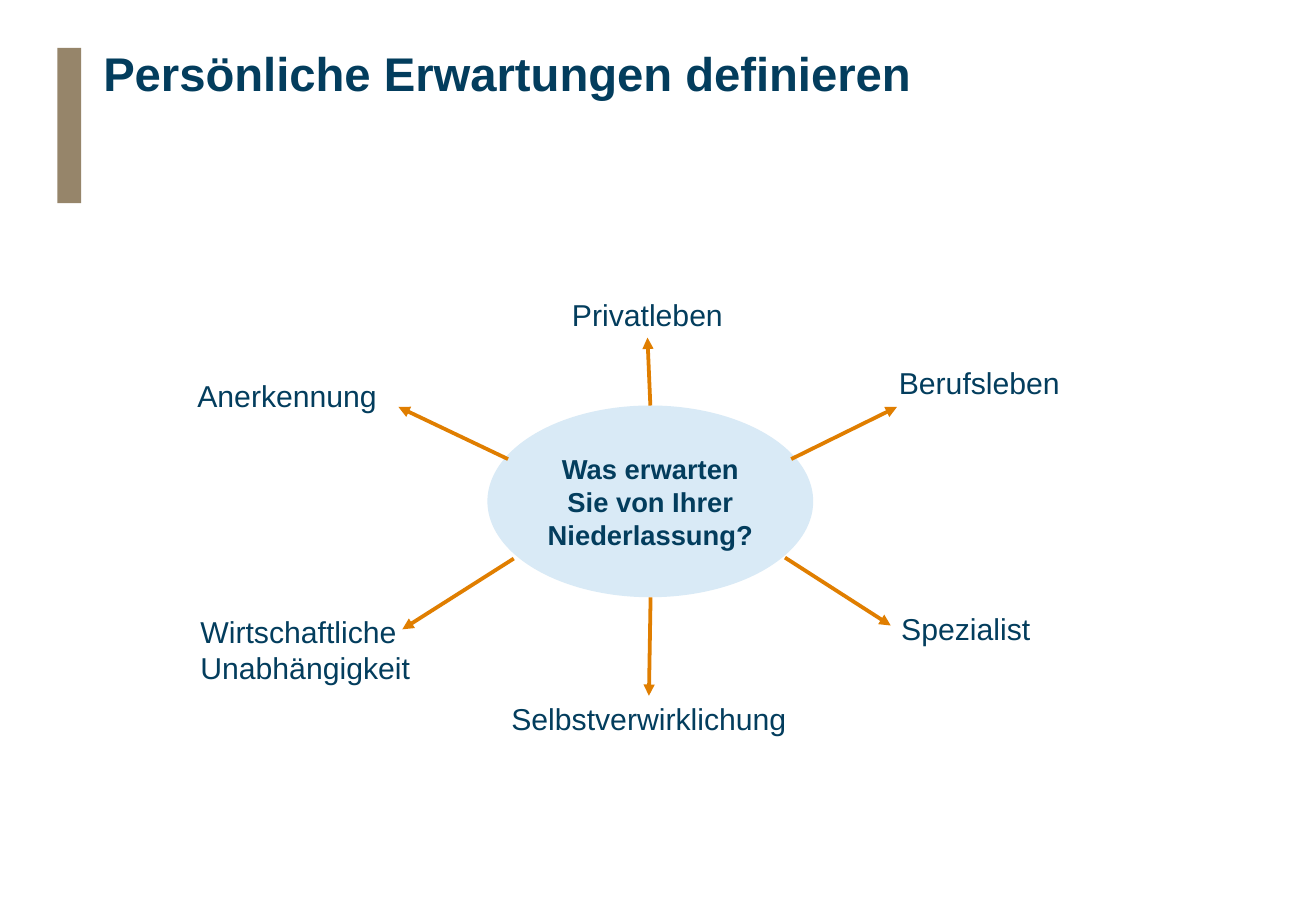
from lxml import etree
from pptx import Presentation
from pptx.dml.color import RGBColor
from pptx.enum.shapes import MSO_CONNECTOR, MSO_SHAPE
from pptx.enum.text import MSO_ANCHOR, MSO_AUTO_SIZE, PP_ALIGN
from pptx.oxml.ns import qn
from pptx.util import Cm, Pt

NAVY = RGBColor(0x03, 0x3D, 0x5D)
TAUPE = RGBColor(0x96, 0x85, 0x6A)
PALE_BLUE = RGBColor(0xD9, 0xEA, 0xF6)
ORANGE = RGBColor(0xE0, 0x7E, 0x00)
LEFT, CENTER, RIGHT = PP_ALIGN.LEFT, PP_ALIGN.CENTER, PP_ALIGN.RIGHT
MIDDLE = MSO_ANCHOR.MIDDLE
GROW = MSO_AUTO_SIZE.SHAPE_TO_FIT_TEXT
RECTANGLE, OVAL = MSO_SHAPE.RECTANGLE, MSO_SHAPE.OVAL
STRAIGHT = MSO_CONNECTOR.STRAIGHT
TOP_SIDE, BOTTOM_SIDE = 0, 2


class Page:
    font = "Arial"
    color = NAVY
    label_size = 17.9

    def __init__(self, deck):
        self.shapes = deck.slides.add_slide(deck.slide_layouts[6]).shapes

    def add_text(self, box, lines, size, bold=False, align=LEFT):
        para = box.text_frame.paragraphs[0]
        para.alignment = align
        for number, line in enumerate(lines):
            if number:
                para.add_line_break()
            span = para.add_run()
            span.text = line
            span.font.name = self.font
            span.font.size = Pt(size)
            span.font.bold = bold
            span.font.color.rgb = self.color
        return para

    def shape(self, kind, place, fill):
        shape = self.shapes.add_shape(kind, *map(Cm, place))
        shape.shadow.inherit = False
        shape.fill.solid()
        shape.fill.fore_color.rgb = fill
        shape.line.fill.background()
        return shape

    def title(self, place, text):
        box = self.shapes.add_textbox(*map(Cm, place))
        box.text_frame.word_wrap = True
        self.add_text(box, [text], 28, bold=True).line_spacing = 0.95

    def label(self, place, lines, align=LEFT, margins=(0.2, 0.1), wrap=False):
        box = self.shapes.add_textbox(*map(Cm, place))
        frame = box.text_frame
        frame.word_wrap = wrap
        frame.auto_size = GROW
        frame.margin_left = frame.margin_right = Cm(margins[0])
        frame.margin_top = frame.margin_bottom = Cm(margins[1])
        self.add_text(box, lines, self.label_size, align=align)
        return box

    def arrow(self, start, end):
        arrow = self.shapes.add_connector(STRAIGHT, *map(Cm, start + end))
        arrow.line.color.rgb = ORANGE
        arrow.line.width = Pt(2.25)
        properties = arrow.element.spPr
        etree.SubElement(properties.find(qn("a:ln")), qn("a:tailEnd"), type="triangle")
        etree.SubElement(properties, qn("a:effectLst"))
        return arrow


def main():
    deck = Presentation()
    deck.slide_width, deck.slide_height = Cm(27.51), Cm(19.05)
    page = Page(deck)

    page.shape(RECTANGLE, (1.2, 1, 0.5, 3.25), TAUPE)
    page.title((1.91, 0.89, 22.68, 2.39), "Persönliche Erwartungen definieren")

    question = page.shape(OVAL, (10.19, 8.48, 6.81, 4.01), PALE_BLUE)
    frame = question.text_frame
    frame.word_wrap = True
    frame.vertical_anchor = MIDDLE
    frame.margin_left = frame.margin_right = Cm(0.2)
    page.add_text(question, ["Was erwarten Sie von Ihrer", "Niederlassung?"], 16.2, True, CENTER)

    private_life = page.label((11.73, 6.1, 3.61, 0.96), ["Privatleben"], CENTER)
    fulfilment = page.label((10.44, 14.55, 6.25, 0.96), ["Selbstverwirklichung"], CENTER)
    page.label((3.86, 7.8, 4.22, 0.96), ["Anerkennung"], RIGHT)
    page.label((18.64, 12.67, 3.15, 0.96), ["Spezialist"])
    page.label((18.59, 7.52, 3.84, 0.96), ["Berufsleben"])
    page.label((3.94, 12.7, 5.03, 1.78), ["Wirtschaftliche", "Unabhängigkeit"],
               margins=(0.25, 0.13), wrap=True)

    for start, end in (
        ((10.62, 9.6), (8.33, 8.51)),
        ((16.54, 9.6), (18.75, 8.51)),
        ((10.74, 11.68), (8.41, 13.16)),
        ((16.41, 11.66), (18.62, 13.08)),
    ):
        page.arrow(start, end)

    upward = page.arrow((13.6, 8.48), (13.54, 7.06))
    upward.begin_connect(question, TOP_SIDE)
    upward.end_connect(private_life, BOTTOM_SIDE)
    downward = page.arrow((13.6, 12.49), (13.56, 14.55))
    downward.end_connect(fulfilment, TOP_SIDE)

    deck.save("out.pptx")


if __name__ == "__main__":
    main()
